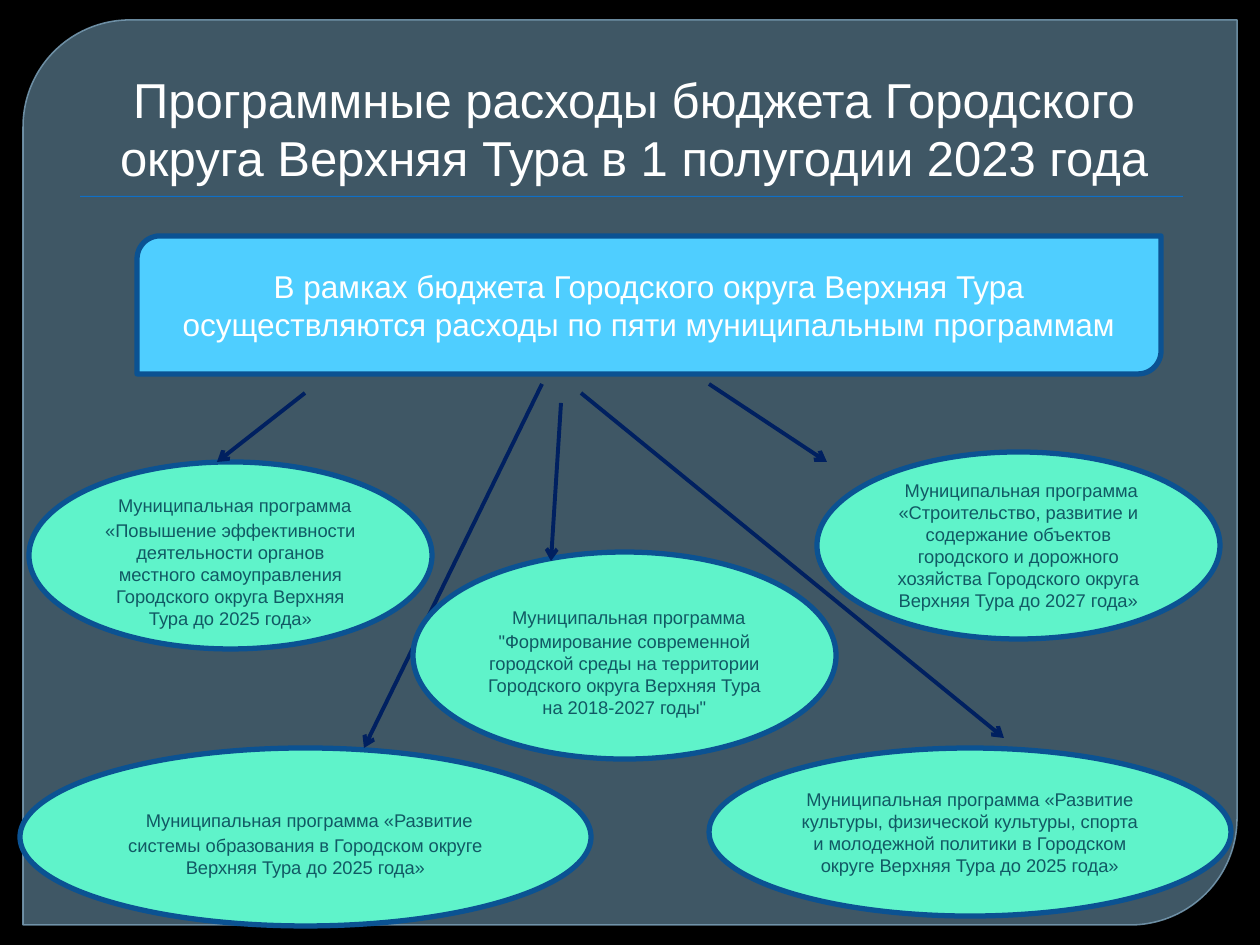
from dataclasses import dataclass

from lxml.etree import SubElement
from pptx import Presentation
from pptx.dml.color import RGBColor
from pptx.enum.shapes import MSO_CONNECTOR as Link, MSO_SHAPE as Kind
from pptx.enum.text import MSO_ANCHOR as Anchor, PP_ALIGN as Align
from pptx.oxml.ns import qn
from pptx.shapes.autoshape import Shape
from pptx.slide import Slide
from pptx.util import Emu, Pt

SCALE = 914400 / 126
BLACK = RGBColor(0x00, 0x00, 0x00)
WHITE = RGBColor(0xFF, 0xFF, 0xFF)
SLATE = RGBColor(0x61, 0x86, 0x9C)
EDGE = RGBColor(0x77, 0x9B, 0xB2)
BLUE = RGBColor(0x0F, 0x6F, 0xC6)
SKY = RGBColor(0x4F, 0xCE, 0xFF)
RIM = RGBColor(0x0B, 0x52, 0x92)
MINT = RGBColor(0x5F, 0xF3, 0xCA)
TEAL = RGBColor(0x11, 0x59, 0x64)
NAVY = RGBColor(0x00, 0x20, 0x60)


@dataclass(frozen=True)
class Box:
    x: int
    y: int
    w: int
    h: int


@dataclass(frozen=True)
class Run:
    text: str
    size: float
    color: RGBColor
    font: str = "Arial"


@dataclass(frozen=True)
class Oval:
    box: Box
    name: str
    lead: Run | None = None


@dataclass(frozen=True)
class Arrow:
    x1: int
    y1: int
    x2: int
    y2: int


OUTER = [
    Oval(Box(29, 462, 403, 187),
         "«Повышение эффективности деятельности органов местного "
         "самоуправления Городского округа Верхняя Тура до 2025 года»",
         Run(" ", 18, WHITE)),
    Oval(Box(817, 452, 403, 187),
         "«Строительство, развитие и содержание объектов городского и "
         "дорожного хозяйства Городского округа Верхняя Тура до 2027 года»",
         Run(" ", 10.5, TEAL, "TeX Gyre Bonum")),
    Oval(Box(709, 748, 522, 168),
         "«Развитие культуры, физической культуры, спорта и молодежной "
         "политики в Городском округе Верхняя Тура до 2025 года»"),
    Oval(Box(20, 748, 571, 178),
         "«Развитие системы образования в Городском округе "
         "Верхняя Тура до 2025 года»",
         Run(" ", 18, TEAL, "Times New Roman")),
]
CENTRE = Oval(Box(413, 552, 423, 207),
              '"Формирование современной городской среды на территории '
              'Городского округа Верхняя Тура на 2018-2027 годы"',
              Run(" ", 18, TEAL))
ARROWS = [
    Arrow(305, 393, 217, 462),
    Arrow(542, 384, 364, 748),
    Arrow(581, 393, 1004, 738),
    Arrow(709, 384, 827, 462),
]
MIDDLE = Arrow(561, 403, 551, 561)


def px(n: int) -> Emu:
    return Emu(round(n * SCALE))


def place(box: Box) -> tuple[Emu, Emu, Emu, Emu]:
    return px(box.x), px(box.y), px(box.w), px(box.h)


def fade(fill, percent: int) -> None:
    """Make a solid fill or line partly see-through."""
    color = next(fill.iter(qn("a:srgbClr")))
    SubElement(color, qn("a:alpha")).set("val", str(percent * 1000))


def draw(slide: Slide, kind: Kind, box: Box, fill: RGBColor,
         line: RGBColor | None = None, width: float = 3) -> Shape:
    shape = slide.shapes.add_shape(kind, *place(box))
    shape.shadow.inherit = False
    shape.fill.solid()
    shape.fill.fore_color.rgb = fill
    if line is None:
        shape.line.fill.background()
    else:
        shape.line.color.rgb = line
        shape.line.width = Pt(width)
    return shape


def write(shape: Shape, runs: list[Run], anchor: Anchor = Anchor.MIDDLE) -> None:
    frame = shape.text_frame
    frame.word_wrap = True
    frame.vertical_anchor = anchor
    para = frame.paragraphs[0]
    para.alignment = Align.CENTER
    for item in runs:
        run = para.add_run()
        run.text = item.text
        run.font.size = Pt(item.size)
        run.font.name = item.font
        run.font.color.rgb = item.color


def add_frame(slide: Slide) -> None:
    frame = draw(slide, Kind.ROUND_2_DIAG_RECTANGLE, Box(23, 20, 1214, 905),
                 SLATE, EDGE, 0.87)
    frame.adjustments[0] = 0.118
    props = frame.element.spPr
    fade(props.find(qn("a:solidFill")), 65)
    fade(props.find(qn("a:ln")), 88)
    draw(slide, Kind.RECTANGLE, Box(80, 196, 1103, 1), BLUE)


def add_title(slide: Slide) -> None:
    title = slide.shapes.add_textbox(*place(Box(63, 35, 1134, 158)))
    write(title, [Run("Программные расходы бюджета Городского округа "
                      "Верхняя Тура в 1 полугодии 2023 года", 28, WHITE)],
          Anchor.BOTTOM)
    title.text_frame.paragraphs[0]._p.get_or_add_pPr().set("marL", str(px(8)))


def add_oval(slide: Slide, oval: Oval) -> None:
    shape = draw(slide, Kind.OVAL, oval.box, MINT, RIM)
    body = Run(f"Муниципальная программа {oval.name}", 10.5, TEAL)
    write(shape, [oval.lead, body] if oval.lead else [body])


def add_arrow(slide: Slide, arrow: Arrow) -> None:
    line = slide.shapes.add_connector(
        Link.STRAIGHT, px(arrow.x1), px(arrow.y1), px(arrow.x2), px(arrow.y2))
    line.line.color.rgb = NAVY
    line.line.width = Pt(2.25)
    props = line.element.spPr
    SubElement(props.find(qn("a:ln")), qn("a:tailEnd")).set("type", "arrow")
    SubElement(props, qn("a:effectLst"))


def main() -> None:
    deck = Presentation()
    deck.slide_width, deck.slide_height = px(1260), px(945)
    slide = deck.slides.add_slide(deck.slide_layouts[6])
    slide.background.fill.solid()
    slide.background.fill.fore_color.rgb = BLACK

    add_frame(slide)
    add_title(slide)
    banner = draw(slide, Kind.ROUND_2_DIAG_RECTANGLE,
                  Box(137, 236, 1024, 138), SKY, RIM)
    write(banner, [Run("В рамках бюджета Городского округа Верхняя Тура "
                       "осуществляются расходы по пяти муниципальным "
                       "программам", 18, WHITE)])
    for oval in OUTER:
        add_oval(slide, oval)
    for arrow in ARROWS:
        add_arrow(slide, arrow)
    add_oval(slide, CENTRE)
    add_arrow(slide, MIDDLE)
    deck.save("out.pptx")


if __name__ == "__main__":
    main()
